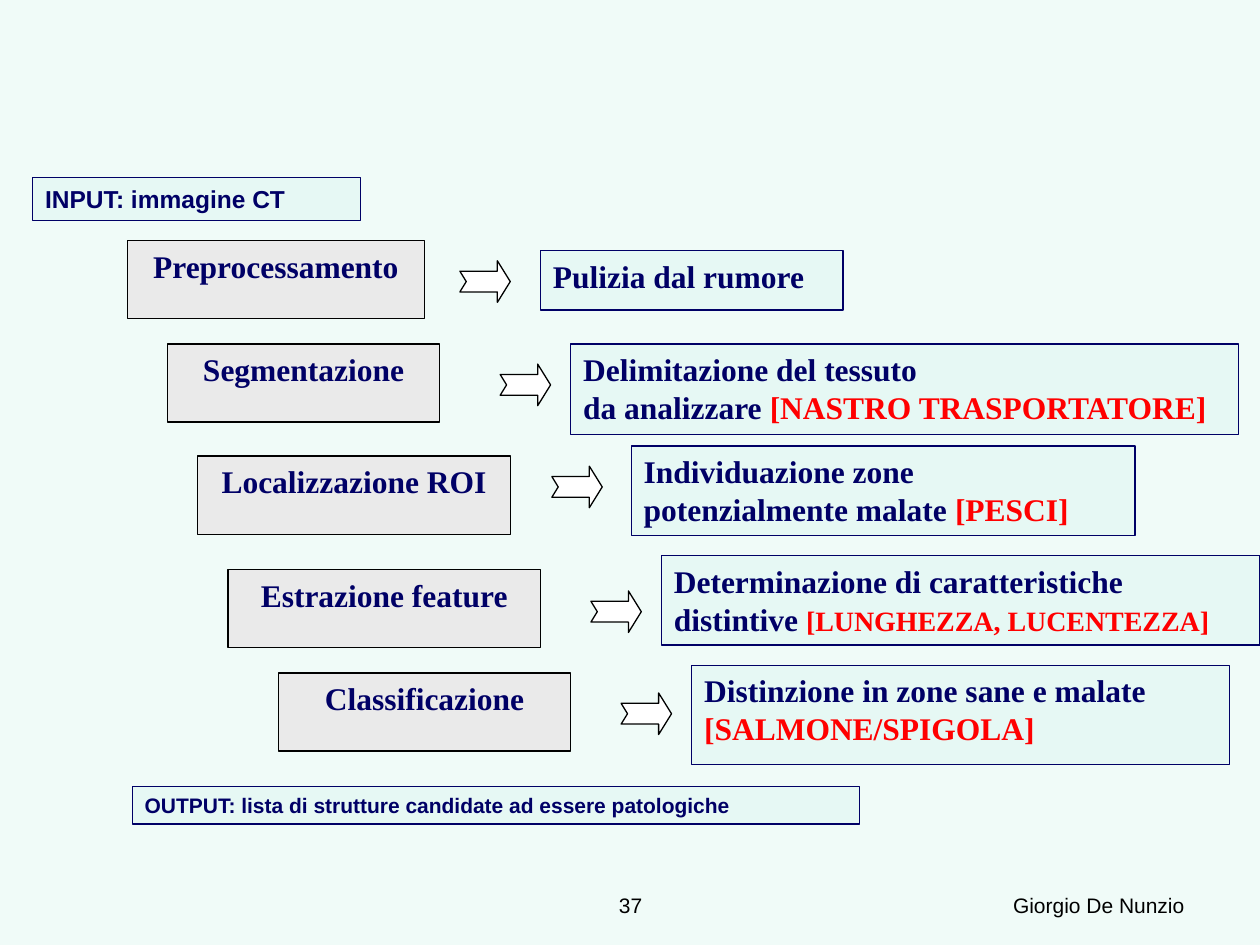
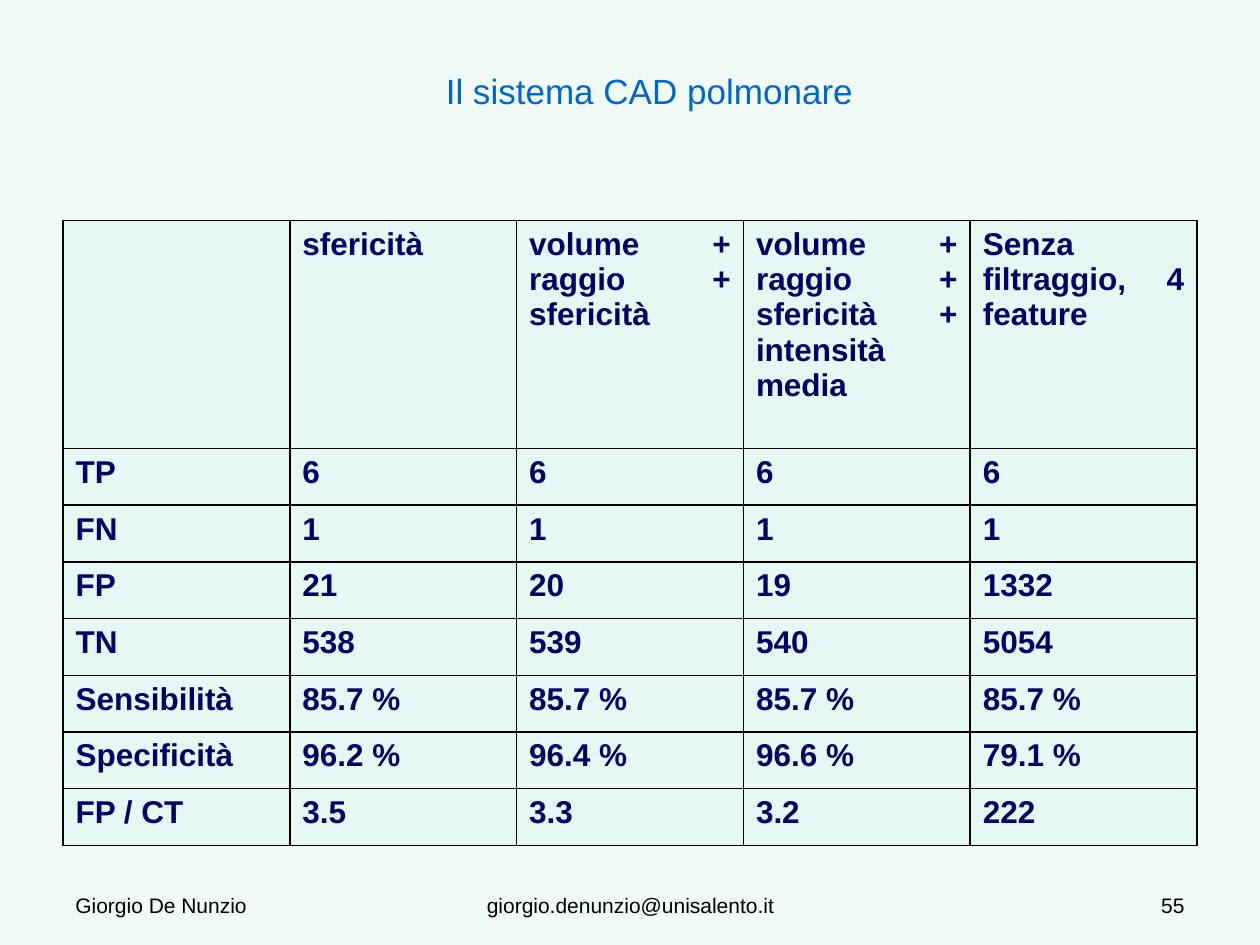
"""Build two slides: the CAD processing chain and the lung CAD results table."""
from typing import NamedTuple

from lxml import etree
from pptx import Presentation
from pptx.dml.color import RGBColor
from pptx.enum import shapes, text
from pptx.oxml import ns
from pptx.util import Inches, Pt

COLORS = {
    "background": "F0FBF8",
    "panel": "E6F8F4",
    "step": "EAEAEA",
    "arrow": "FFFFFF",
    "navy": "000066",
    "title": "0066CC",
    "example": "FF0000",
    "black": "000000",
}
SANS, SERIF = "Arial", "Times New Roman"
LEFT, CENTER, RIGHT, JUSTIFY = (
    text.PP_ALIGN.LEFT, text.PP_ALIGN.CENTER, text.PP_ALIGN.RIGHT, text.PP_ALIGN.JUSTIFY)


class Box(NamedTuple):
    """Position and size in inches."""

    left: float
    top: float
    width: float
    height: float


class Span(NamedTuple):
    """A stretch of text with one format."""

    text: str
    size: float = 18
    color: str = "navy"
    font: str = SERIF
    bold: bool = True


class Stage(NamedTuple):
    """One step of the chain, its arrow and its explanation."""

    name: str
    step: Box
    arrow: tuple[float, float]
    panel: Box
    lines: list[list[Span]]


class Endpoint(NamedTuple):
    """The input or the output of the chain."""

    label: str
    box: Box
    size: float


class FooterSlot(NamedTuple):
    """A place at the foot of the slide."""

    box: Box
    align: text.PP_ALIGN


FOOTER = [
    FooterSlot(Box(0.5, 6.83, 2.33, 0.5), LEFT),
    FooterSlot(Box(3.42, 6.83, 3.17, 0.5), CENTER),
    FooterSlot(Box(7.17, 6.83, 2.33, 0.5), RIGHT),
]

STAGES = [
    Stage("Preprocessamento", Box(1.01, 1.91, 2.36, 0.62), (3.65, 2.07),
          Box(4.29, 1.99, 2.4, 0.47), [[Span("Pulizia dal rumore")]]),
    Stage("Segmentazione", Box(1.33, 2.73, 2.16, 0.62), (3.97, 2.89),
          Box(4.53, 2.73, 5.3, 0.72),
          [[Span("Delimitazione del tessuto")],
           [Span("da analizzare "), Span("[NASTRO TRASPORTATORE]", color="example")]]),
    Stage("Localizzazione ROI", Box(1.57, 3.62, 2.48, 0.62), (4.38, 3.7),
          Box(5.01, 3.54, 4, 0.71),
          [[Span("Individuazione zone")],
           [Span("potenzialmente malate "), Span("[PESCI]", color="example")]]),
    Stage("Estrazione feature", Box(1.81, 4.52, 2.48, 0.62), (4.69, 4.69),
          Box(5.25, 4.41, 4.75, 0.71),
          [[Span("Determinazione di caratteristiche distintive "),
            Span("[LUNGHEZZA, LUCENTEZZA]", 16, "example")]]),
    Stage("Classificazione", Box(2.21, 5.34, 2.32, 0.62), (4.93, 5.5),
          Box(5.49, 5.28, 4.27, 0.79),
          [[Span("Distinzione in zone sane e malate "),
            Span("[SALMONE/SPIGOLA]", color="example")]]),
]

ENDPOINTS = [
    Endpoint("INPUT: immagine CT", Box(0.26, 1.41, 2.6, 0.34), 14),
    Endpoint("OUTPUT: lista di strutture candidate ad essere patologiche",
             Box(1.05, 6.24, 5.77, 0.3), 12),
]

RESULTS = [
    ["", "sfericità", "volume + raggio + sfericità",
     "volume + raggio + sfericità + intensità media", "Senza filtraggio, 4 feature"],
    ["TP", "6", "6", "6", "6"],
    ["FN", "1", "1", "1", "1"],
    ["FP", "21", "20", "19", "1332"],
    ["TN", "538", "539", "540", "5054"],
    ["Sensibilità", "85.7 %", "85.7 %", "85.7 %", "85.7 %"],
    ["Specificità", "96.2 %", "96.4 %", "96.6 %", "79.1 %"],
    ["FP / CT", "3.5", "3.3", "3.2", "222"],
]


def rgb(name: str) -> RGBColor:
    """Return a named colour."""
    return RGBColor.from_string(COLORS[name])


def emu(box: Box) -> list[int]:
    """Convert a box to lengths for python-pptx."""
    return [Inches(v) for v in box]


def write(tf, lines: list[list[Span]], align=LEFT, anchor=text.MSO_ANCHOR.TOP) -> None:
    """Fill a text frame with formatted paragraphs."""
    tf.word_wrap = True
    tf.vertical_anchor = anchor
    for i, spans in enumerate(lines):
        p = tf.add_paragraph() if i else tf.paragraphs[0]
        p.alignment = align
        for span in spans:
            r = p.add_run()
            r.text = span.text
            r.font.size = Pt(span.size)
            r.font.name = span.font
            r.font.bold = span.bold
            r.font.color.rgb = rgb(span.color)


def add_outlined(s, kind, box: Box, fill: str, line: str):
    """Add a filled shape with a thin outline and no shadow."""
    sp = s.shapes.add_shape(kind, *emu(box))
    sp.shadow.inherit = False
    sp.fill.solid()
    sp.fill.fore_color.rgb = rgb(fill)
    sp.line.color.rgb = rgb(line)
    sp.line.width = Pt(0.75)
    return sp


def add_panel(s, box: Box, lines: list[list[Span]], fill="panel", line="navy", align=LEFT) -> None:
    """Add a rectangle with text."""
    sp = add_outlined(s, shapes.MSO_SHAPE.RECTANGLE, box, fill, line)
    write(sp.text_frame, lines, align)


def add_stage(s, stage: Stage) -> None:
    """Draw one step with its arrow and explanation."""
    add_panel(s, stage.step, [[Span(stage.name)]], "step", "black", CENTER)
    arrow = add_outlined(s, shapes.MSO_SHAPE.NOTCHED_RIGHT_ARROW,
                         Box(*stage.arrow, 0.4, 0.33), "arrow", "black")
    arrow.adjustments[1] = 0.31
    add_panel(s, stage.panel, stage.lines)


def add_footer(s, *labels: str) -> None:
    """Write the left, centre and right footer labels, skipping empty ones."""
    for slot, label in zip(FOOTER, labels):
        if label:
            sp = s.shapes.add_textbox(*emu(slot.box))
            write(sp.text_frame, [[Span(label, 12, "black", SANS, False)]],
                  slot.align, text.MSO_ANCHOR.BOTTOM)


def set_borders(cell) -> None:
    """Give a cell thin black borders on all sides."""
    tc_pr = cell._tc.get_or_add_tcPr()
    for i, side in enumerate(("lnL", "lnR", "lnT", "lnB")):
        ln = etree.Element(ns.qn(f"a:{side}"), w=str(Pt(1)))
        fill = etree.SubElement(ln, ns.qn("a:solidFill"))
        etree.SubElement(fill, ns.qn("a:srgbClr"), val=COLORS["black"])
        tc_pr.insert(i, ln)


def add_results(s, box: Box, rows: list[list[str]], header_height: float) -> None:
    """Add the results table with equal columns and equal body rows."""
    table = s.shapes.add_table(len(rows), len(rows[0]), *emu(box)).table
    table.first_row = table.horz_banding = False
    body_height = (box.height - header_height) / (len(rows) - 1)
    for i, values in enumerate(rows):
        table.rows[i].height = Inches(body_height if i else header_height)
        for j, value in enumerate(values):
            cell = table.cell(i, j)
            cell.fill.solid()
            cell.fill.fore_color.rgb = rgb("panel")
            set_borders(cell)
            if value:
                write(cell.text_frame, [[Span(value, font=SANS)]], JUSTIFY)


def build_chain(prs) -> None:
    """Build the slide with the processing chain."""
    s = prs.slides.add_slide(prs.slide_layouts[6])
    for end in ENDPOINTS:
        add_panel(s, end.box, [[Span(end.label, end.size, font=SANS)]])
    for stage in STAGES:
        add_stage(s, stage)
    add_footer(s, "", "37", "Giorgio De Nunzio")


def build_results(prs) -> None:
    """Build the slide with the results table."""
    s = prs.slides.add_slide(prs.slide_layouts[5])
    title = s.shapes.title
    title.left, title.top, title.width, title.height = emu(Box(0.35, 0.45, 9.61, 0.54))
    write(title.text_frame, [[Span("Il sistema CAD polmonare", 20, "title", SANS, False)]],
          CENTER, text.MSO_ANCHOR.MIDDLE)
    add_results(s, Box(0.5, 1.75, 9, 4.96), RESULTS, 1.81)
    add_footer(s, "Giorgio De Nunzio", "giorgio.denunzio@unisalento.it", "55")


def main() -> None:
    """Build and save the presentation."""
    prs = Presentation()
    prs.slide_width, prs.slide_height = Inches(10), Inches(7.5)
    background = prs.slide_master.background.fill
    background.solid()
    background.fore_color.rgb = rgb("background")
    build_chain(prs)
    build_results(prs)
    prs.save("out.pptx")


if __name__ == "__main__":
    main()
